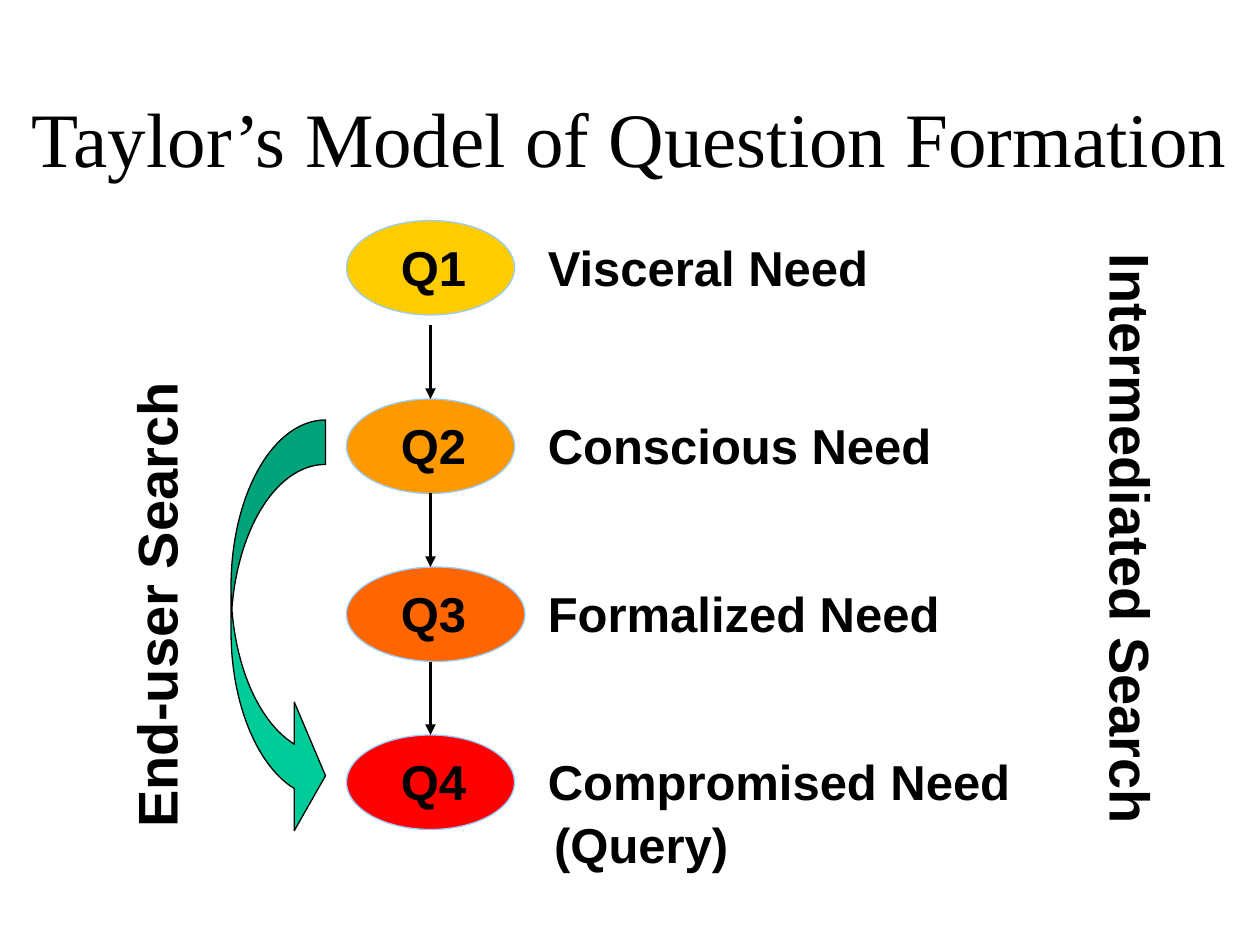
from lxml.etree import SubElement
from pptx import Presentation
from pptx.dml.color import RGBColor
from pptx.enum.shapes import MSO_CONNECTOR, MSO_SHAPE
from pptx.enum.text import MSO_ANCHOR, MSO_AUTO_SIZE, PP_ALIGN
from pptx.oxml.ns import qn
from pptx.util import Pt

EMU_PER_PX = 7620


def px(*lengths):
    return [length * EMU_PER_PX for length in lengths]


def color(value):
    return RGBColor.from_string(value)


presentation = Presentation()
presentation.slide_width, presentation.slide_height = px(1200, 900)
slide = presentation.slides.add_slide(presentation.slide_layouts[5])
shapes = slide.shapes

title = shapes.title
title.left, title.top, title.width, title.height = px(0, 80, 1200, 100)
title.text_frame.text = "Taylor’s Model of Question Formation"
title.text_frame.word_wrap = True
title.text_frame.auto_size = MSO_AUTO_SIZE.NONE
title.text_frame.vertical_anchor = MSO_ANCHOR.MIDDLE
heading = title.text_frame.paragraphs[0]
heading.alignment = PP_ALIGN.CENTER
heading.font.size = Pt(44)
heading.font.name = "Times New Roman"
heading.font.color.rgb = color("000000")

stages = [
    ("Q1", ["Visceral Need"], 210, 160, "FFCC00"),
    ("Q2", ["Conscious Need"], 380, 160, "FF9900"),
    ("Q3", ["Formalized Need"], 540, 170, "FF6600"),
    ("Q4", ["Compromised Need", "(Query)"], 700, 160, "FF0000"),
]
captions = [
    ("End-user Search", -92, 522, 480, 270),
    ("Intermediated Search", 778, 492, 600, 90),
]

outlined = [
    (MSO_SHAPE.OVAL, 330, top, width, 90, fill, "99CCFF")
    for _, _, top, width, fill in stages
]
outlined.append((MSO_SHAPE.CURVED_RIGHT_ARROW, 220, 400, 90, 400, "00CC99", "000000"))
for preset, left, top, width, height, fill, outline in outlined:
    figure = shapes.add_shape(preset, *px(left, top, width, height))
    figure.shadow.inherit = False
    figure.fill.solid()
    figure.fill.fore_color.rgb = color(fill)
    figure.line.color.rgb = color(outline)
    figure.line.width = Pt(0.75)
    if preset == MSO_SHAPE.CURVED_RIGHT_ARROW:
        for index, ratio in enumerate([0.47, 1.36, 0.33]):
            figure.adjustments[index] = ratio

for stage in stages[1:]:
    stage_top = stage[2]
    step = shapes.add_connector(
        MSO_CONNECTOR.STRAIGHT, *px(410, stage_top - 70, 410, stage_top)
    )
    step.line.color.rgb = color("000000")
    step.line.width = Pt(2)
    SubElement(step.line._get_or_add_ln(), qn("a:tailEnd"), type="triangle")
    SubElement(step._element.spPr, qn("a:effectLst"))

labels = [
    ([f"{code}\t{needs[0]}", *needs[1:]], 370, top + 10, 690, 12 + 56 * len(needs), 0, 28)
    for code, needs, top, _, _ in stages
]
labels += [
    ([caption], left, top, width, 76, rotation, 32)
    for caption, left, top, width, rotation in captions
]
for lines, left, top, width, height, rotation, size in labels:
    label = shapes.add_textbox(*px(left, top, width, height))
    label.rotation = rotation
    label.text_frame.word_wrap = True
    label.text_frame.text = "\n".join(lines)
    for number, paragraph in enumerate(label.text_frame.paragraphs):
        paragraph.font.size = Pt(size)
        paragraph.font.name = "Arial"
        paragraph.font.bold = True
        paragraph.font.color.rgb = color("000000")
        properties = paragraph._p.get_or_add_pPr()
        if number:
            properties.set("marL", str(px(146)[0]))
            paragraph.space_before = Pt(2)
        elif "\t" in lines[0]:
            tabs = properties.makeelement(qn("a:tabLst"))
            properties.find(qn("a:defRPr")).addprevious(tabs)
            SubElement(tabs, qn("a:tab"), pos=str(px(140)[0]), algn="l")

presentation.save("out.pptx")
